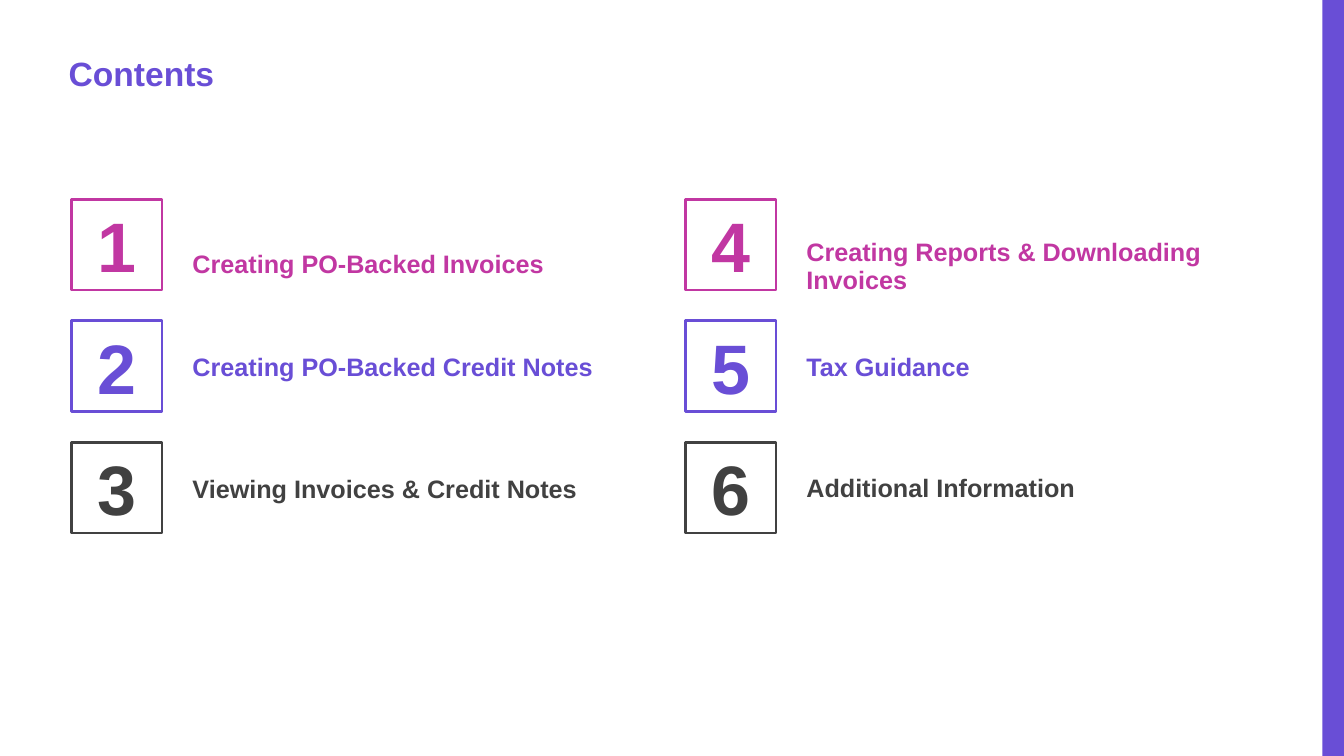
from dataclasses import dataclass

from pptx import Presentation
from pptx.dml.color import RGBColor
from pptx.enum.shapes import MSO_SHAPE as Preset
from pptx.enum.text import MSO_ANCHOR as Anchor, PP_ALIGN as Align
from pptx.util import Pt


@dataclass(frozen=True)
class Theme:
    font: str = "Arial"
    purple: str = "694ED6"
    magenta: str = "C137A2"
    charcoal: str = "414141"
    title_size: int = 24
    number_size: int = 50
    label_size: int = 18


def write_text(shape, text, *, theme, size, color, anchor=Anchor.TOP,
               align=Align.LEFT, line_spacing=None, margin=None):
    frame = shape.text_frame
    frame.word_wrap = True
    frame.vertical_anchor = anchor
    if margin is not None:
        frame.margin_left = frame.margin_right = Pt(margin)
        frame.margin_top = frame.margin_bottom = Pt(margin)
    paragraph = frame.paragraphs[0]
    paragraph.alignment = align
    if line_spacing:
        paragraph.line_spacing = line_spacing
    run = paragraph.add_run()
    run.text = text
    run.font.name = theme.font
    run.font.size = Pt(size)
    run.font.bold = True
    run.font.color.rgb = RGBColor.from_string(color)


class ContentsSlide:
    def __init__(self, slide, theme):
        self.slide = slide
        self.theme = theme

    def rectangle(self, left, top, width, height):
        shape = self.slide.shapes.add_shape(
            Preset.RECTANGLE, Pt(left), Pt(top), Pt(width), Pt(height))
        shape.shadow.inherit = False
        return shape

    def side_bar(self, left, top, width, height):
        bar = self.rectangle(left, top, width, height)
        bar.fill.solid()
        bar.fill.fore_color.rgb = RGBColor.from_string(self.theme.purple)
        bar.line.fill.background()

    def number_box(self, number, left, top, side, color):
        box = self.rectangle(left, top, side, side)
        box.fill.background()
        box.line.color.rgb = RGBColor.from_string(color)
        box.line.width = Pt(2)
        write_text(box, str(number), theme=self.theme,
                   size=self.theme.number_size, color=color,
                   anchor=Anchor.MIDDLE, align=Align.CENTER)

    def text(self, text, left, top, width, height, **text_format):
        box = self.slide.shapes.add_textbox(
            Pt(left), Pt(top), Pt(width), Pt(height))
        write_text(box, text, theme=self.theme, margin=0, **text_format)


def main():
    theme = Theme()
    presentation = Presentation()
    presentation.slide_width, presentation.slide_height = Pt(960), Pt(540)
    slide = presentation.slides.add_slide(presentation.slide_layouts[6])
    contents = ContentsSlide(slide, theme)

    # Side bar and title
    contents.side_bar(944.5, 0, 15.5, 540)
    contents.text("Contents", 49, 13.7, 763, 52.5, size=theme.title_size,
                  color=theme.purple, anchor=Anchor.BOTTOM, line_spacing=0.8)

    # Two columns of numbered sections: each label with its top
    columns = [
        [("Creating PO-Backed Invoices", 179.5),
         ("Creating PO-Backed Credit Notes", 253.6),
         ("Viewing Invoices & Credit Notes", 340.7)],
        [("Creating Reports & Downloading Invoices", 171.5),
         ("Tax Guidance", 253.6),
         ("Additional Information", 340)],
    ]
    row_colors = [theme.magenta, theme.purple, theme.charcoal]
    first_left, first_top = 51, 142.4
    column_step, row_step = 438.5, 86.8
    box_side, label_offset = 64.8, 86.5

    for column, sections in enumerate(columns):
        left = first_left + column * column_step
        for row, (label, label_top) in enumerate(sections):
            color = row_colors[row]
            number = column * len(sections) + row + 1
            contents.number_box(number, left, first_top + row * row_step,
                                box_side, color)
            contents.text(label, left + label_offset, label_top, 288, 40,
                          size=theme.label_size, color=color, line_spacing=0.9)

    presentation.save("out.pptx")


if __name__ == "__main__":
    main()
